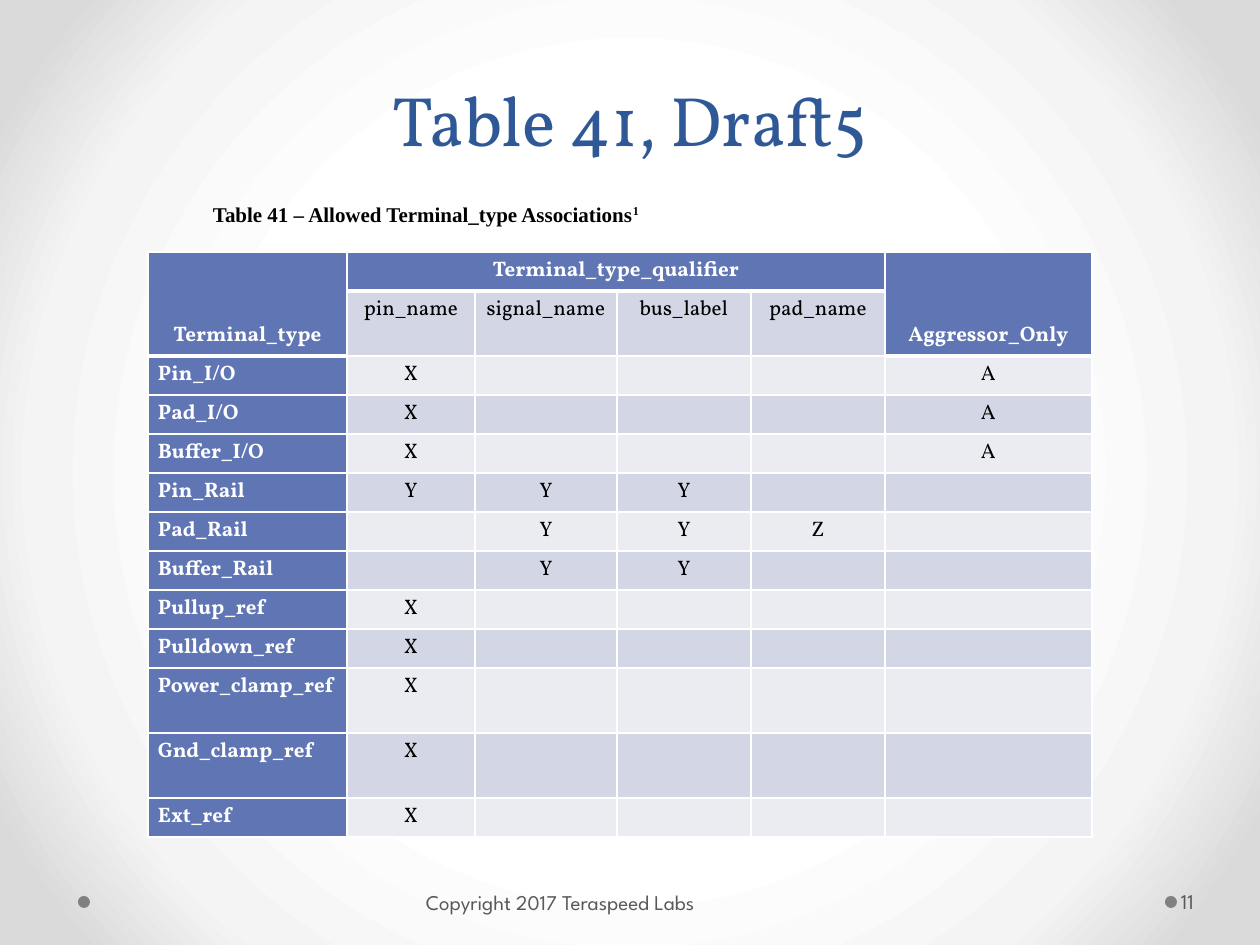
import pptx
import pptx.dml.color
import pptx.enum.shapes
import pptx.enum.text
import pptx.oxml
import pptx.util

SCALE = 914400 / 126
NS = 'xmlns:a="http://schemas.openxmlformats.org/drawingml/2006/main"'
ANCHOR = pptx.enum.text.MSO_ANCHOR
CENTER = pptx.enum.text.PP_ALIGN.CENTER
SERIF, SANS = "Vollkorn", "League Spartan"
BLUE, LIGHT, DARK = "6076B4", "EAECF2", "D2D6E5"
WHITE, BLACK, GRAY = "FFFFFF", "000000", "595959"


def px(n):
    return pptx.util.Emu(round(n * SCALE))


def color(code):
    return pptx.dml.color.RGBColor.from_string(code)


def xml(text):
    return pptx.oxml.parse_xml(text)


class Deck:
    def __init__(self, wide, high):
        self.prs = pptx.Presentation()
        self.prs.slide_width, self.prs.slide_height = px(wide), px(high)
        self.slide = self.prs.slides.add_slide(self.prs.slide_layouts[6])
        self.shapes = self.slide.shapes

    def glow(self, stops):
        """Fill the background with a gradient running out from the centre."""
        fill = self.slide.background.fill
        fill.gradient()
        marks = "".join(f'<a:gs pos="{pos * 1000}"><a:srgbClr val="{code}"/></a:gs>'
                        for pos, code in stops)
        grad = xml(f'<a:gradFill {NS} rotWithShape="1"><a:gsLst>{marks}</a:gsLst>'
                   '<a:path path="circle"><a:fillToRect l="50000" t="50000" '
                   'r="50000" b="50000"/></a:path></a:gradFill>')
        old = self.slide.background._cSld.bg.bgPr[0]
        old.getparent().replace(old, grad)

    def dot(self, x, y, size, code):
        kind = pptx.enum.shapes.MSO_SHAPE.OVAL
        dot = self.shapes.add_shape(kind, px(x), px(y), px(size), px(size))
        dot.shadow.inherit = False
        dot.fill.solid()
        dot.fill.fore_color.rgb = color(code)
        dot.line.fill.background()

    def style(self, para, size, face, code, bold=False):
        font = para.font
        font.size, font.name, font.bold = pptx.util.Pt(size), face, bold
        font.color.rgb = color(code)

    def text(self, box, words, size, face, code, bold=False, anchor=ANCHOR.MIDDLE,
             left=13):
        shape = self.shapes.add_textbox(*map(px, box))
        frame = shape.text_frame
        frame.word_wrap = True
        frame.vertical_anchor = anchor
        frame.margin_left = px(left)
        para = frame.paragraphs[0]
        para.text = words
        self.style(para, size, face, code, bold)
        return para

    def cell(self, cell, words, fill, head, edges, center, anchor):
        cell.margin_left = cell.margin_right = px(10)
        cell.margin_top = cell.margin_bottom = px(5)
        cell.vertical_anchor = anchor
        props = cell._tc.get_or_add_tcPr()
        for side, width in edges.items():
            props.append(xml(f'<a:ln{side} {NS} w="{width * 12700}"><a:solidFill>'
                             f'<a:srgbClr val="{WHITE}"/></a:solidFill></a:ln{side}>'))
        cell.fill.solid()
        cell.fill.fore_color.rgb = color(fill)
        para = cell.text_frame.paragraphs[0]
        if words:
            para.text = words
            para.space_after = pptx.util.Pt(4)
            if center:
                para.alignment = CENTER
            self.style(para, 12, SERIF, WHITE if head else BLACK, head)
        else:
            para._p.append(xml(f'<a:endParaRPr {NS} sz="1200"/>'))

    def table(self, x, y, cols, highs, rows):
        """Draw a table with a two-row header and a header column."""
        frame = self.shapes.add_table(len(rows), len(cols), px(x), px(y),
                                      px(sum(cols)), px(sum(highs)))
        table = frame.table
        table.first_row = table.horz_banding = False
        for col, wide in zip(table.columns, cols):
            col.width = px(wide)
        for row, high in zip(table.rows, highs):
            row.height = px(high)
        last = len(cols) - 1
        for r, row in enumerate(rows):
            for c, words in enumerate(row):
                tall = c in (0, last)
                head = r == 0 or c == 0 or (r == 1 and tall)
                rule = 2 if tall else 1
                edges = {"L": 1, "R": 1, "T": 3 if r == rule else 1,
                         "B": 3 if r == rule - 1 or r == 0 else 1}
                fill = BLUE if head else DARK if r % 2 else LIGHT
                anchor = ANCHOR.BOTTOM if r < 2 and tall else ANCHOR.TOP
                self.cell(table.cell(r, c), words, fill, head, edges,
                          c > 0 or r < 2, anchor)
        table.cell(0, 1).merge(table.cell(0, last - 1))
        for c in (0, last):
            table.cell(0, c).merge(table.cell(1, c))


ROWS = [
    ["Terminal_type", "Terminal_type_qualifier", "", "", "", "Aggressor_Only"],
    ["", "pin_name", "signal_name", "bus_label", "pad_name", ""],
    ["Pin_I/O", "X", "", "", "", "A"],
    ["Pad_I/O", "X", "", "", "", "A"],
    ["Buffer_I/O", "X", "", "", "", "A"],
    ["Pin_Rail", "Y", "Y", "Y", "", ""],
    ["Pad_Rail", "", "Y", "Y", "Z", ""],
    ["Buffer_Rail", "", "Y", "Y", "", ""],
    ["Pullup_ref", "X", "", "", "", ""],
    ["Pulldown_ref", "X", "", "", "", ""],
    ["Power_clamp_ref", "X", "", "", "", ""],
    ["Gnd_clamp_ref", "X", "", "", "", ""],
    ["Ext_ref", "X", "", "", "", ""],
]
COLS = [199, 128, 142, 134, 134, 207]
HIGHS = [65 if r in (1, 10, 11) else 39 for r in range(len(ROWS))]


def main():
    deck = Deck(1260, 945)
    deck.glow([(50, WHITE), (76, "F4F4F4"), (92, "DADADA")])
    for x in (1165, 78):
        deck.dot(x, 896, 12, "808080")
    title = deck.text((63, 0, 1134, 220), "Table 41, Draft5", 40, SERIF, "2F5897")
    title.alignment = CENTER
    title.line_spacing = pptx.util.Pt(58)
    deck.text((1177, 876, 77, 50), "11", 12, SANS, GRAY, left=4)
    deck.text((420, 877, 392, 50), "Copyright 2017 Teraspeed Labs", 12, SANS, GRAY,
              left=6)
    deck.table(148, 252, COLS, HIGHS, ROWS)
    label = deck.text((200, 195, 1060, 77),
                      "Table 41 – Allowed Terminal_type Associations", 12,
                      "Times New Roman", BLACK, True, ANCHOR.TOP)
    note = label.add_run()
    note.text = "1"
    note._r.get_or_add_rPr().set("baseline", "30000")
    deck.prs.save("out.pptx")


if __name__ == "__main__":
    main()
